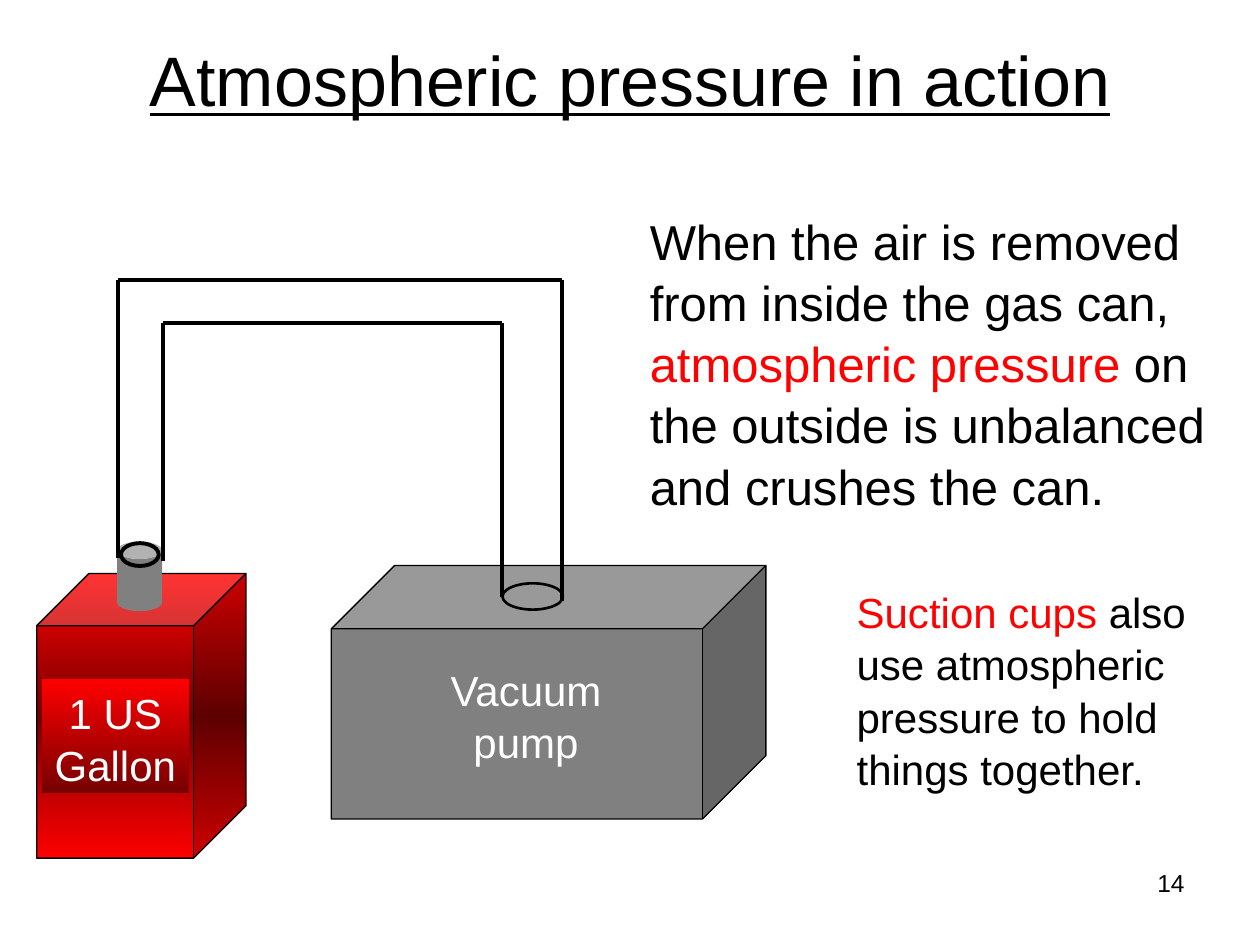
from copy import deepcopy

from lxml.etree import SubElement
from pptx import Presentation
from pptx.dml.color import RGBColor
from pptx.enum.shapes import MSO_CONNECTOR, MSO_SHAPE
from pptx.enum.text import MSO_ANCHOR, PP_ALIGN
from pptx.oxml.ns import qn
from pptx.util import Cm, Pt

BLACK, WHITE, RED, DARK_RED, GRAY = "000000", "FFFFFF", "FF0000", "760000", "808080"


def color(value):
    return RGBColor.from_string(value)


def write_text(shape, lines, size=24, font_color=BLACK, align=PP_ALIGN.LEFT,
               underline=None, anchor=MSO_ANCHOR.TOP, wrap=True, spacing=1.04):
    """Write one paragraph per line; a line is a list of text or (text, color)."""
    frame = shape.text_frame
    frame.word_wrap = wrap
    frame.vertical_anchor = anchor
    for index, line in enumerate(lines):
        paragraph = frame.paragraphs[0] if index == 0 else frame.add_paragraph()
        paragraph.alignment = align
        paragraph.line_spacing = spacing
        for part in line:
            text, part_color = part if isinstance(part, tuple) else (part, font_color)
            run = paragraph.add_run()
            run.text = text
            run.font.name = "Arial"
            run.font.size = Pt(size)
            run.font.underline = underline
            run.font.color.rgb = color(part_color)


def fill_gradient(shape, colors):
    """Fill from top to bottom with evenly spaced colors."""
    shape.fill.gradient()
    shape.fill.gradient_angle = 270
    stop_list = shape.element.spPr.find(qn("a:gradFill")).find(qn("a:gsLst"))
    while len(stop_list) < len(colors):
        stop_list.append(deepcopy(stop_list[0]))
    for index, stop in enumerate(shape.fill.gradient_stops):
        stop.position = index / (len(colors) - 1)
        stop.color.rgb = color(colors[index])


def add_shape(slide, kind, left, top, width, height, fill=None, line_width=None,
              adjustment=None):
    shape = slide.shapes.add_shape(kind, Cm(left), Cm(top), Cm(width), Cm(height))
    shape.shadow.inherit = False
    if isinstance(fill, list):
        fill_gradient(shape, fill)
    elif fill:
        shape.fill.solid()
        shape.fill.fore_color.rgb = color(fill)
    else:
        shape.fill.background()
    if line_width:
        shape.line.color.rgb = color(BLACK)
        shape.line.width = Pt(line_width)
    else:
        shape.line.fill.background()
    if adjustment:
        shape.adjustments[0] = adjustment
    return shape


def add_label(slide, left, top, width, height, fill, words):
    label = add_shape(slide, MSO_SHAPE.RECTANGLE, left, top, width, height, fill)
    write_text(label, [[word] for word in words], font_color=WHITE,
               align=PP_ALIGN.CENTER, wrap=False)


def add_text(slide, left, top, width, height, lines, **text_format):
    box = slide.shapes.add_textbox(Cm(left), Cm(top), Cm(width), Cm(height))
    write_text(box, lines, **text_format)
    return box


def add_title(slide, left, top, width, height, text):
    title = slide.shapes.title
    title.left, title.top = Cm(left), Cm(top)
    title.width, title.height = Cm(width), Cm(height)
    write_text(title, [[text]], size=40, align=PP_ALIGN.CENTER, underline=True,
               anchor=MSO_ANCHOR.MIDDLE, spacing=1.0)


def add_pump(slide, left, top, width, height):
    add_shape(slide, MSO_SHAPE.CUBE, left, top, width, height, GRAY, 0.75, 0.25)
    add_label(slide, left + 2.11, top + 1.83, 3.63, 2.29, GRAY, ["Vacuum", "pump"])
    # Port where the hose enters
    add_shape(slide, MSO_SHAPE.OVAL, left + 3.45, top + 0.36, 1.22, 0.53, line_width=1.5)


def add_gas_can(slide, left, top, width, height):
    add_shape(slide, MSO_SHAPE.CUBE, left, top, width, height,
              [RED, DARK_RED, RED], 0.75, 0.25)
    add_label(slide, left + 0.1, top + 2.13, 2.97, 2.29, [RED, DARK_RED],
              ["1 US", "Gallon"])
    # Spout and its opening
    add_shape(slide, MSO_SHAPE.CAN, left + 1.62, top - 0.64, 0.91, 1.4, GRAY,
              adjustment=0.384)
    add_shape(slide, MSO_SHAPE.OVAL, left + 1.7, top - 0.61, 0.76, 0.46, line_width=2.25)


def add_hose(slide, left, top, width, height):
    inner_left, inner_top, inner_right = 0.91, 0.88, width - 1.2
    segments = [
        # Outer wall
        (0, 0, width, 0),
        (0, 0, 0, 5.61),
        (width, 0, width, height),
        # Inner wall
        (inner_left, inner_top, inner_right, inner_top),
        (inner_left, inner_top, inner_left, 5.66),
        (inner_right, inner_top, inner_right, height - 0.08),
    ]
    for x1, y1, x2, y2 in segments:
        line = slide.shapes.add_connector(
            MSO_CONNECTOR.STRAIGHT, Cm(left + x1), Cm(top + y1),
            Cm(left + x2), Cm(top + y2))
        line.line.color.rgb = color(BLACK)
        line.line.width = Pt(2.25)
        SubElement(line.element.spPr, qn("a:effectLst"))


def main():
    presentation = Presentation()
    presentation.slide_width, presentation.slide_height = Cm(25.4), Cm(19.05)
    slide = presentation.slides.add_slide(presentation.slide_layouts[5])

    add_title(slide, 0, 0, 25.4, 3.18, "Atmospheric pressure in action")

    # Explanation
    add_text(slide, 12.85, 4.09, 11.73, 6.2, [
        ["When the air is removed"],
        ["from inside the gas can,"],
        [("atmospheric pressure ", RED), "on"],
        ["the outside is unbalanced"],
        ["and crushes the can."],
    ], size=28, wrap=False)

    # Experiment
    add_pump(slide, 6.68, 11.4, 8.76, 5.11)
    add_gas_can(slide, 0.74, 11.56, 4.22, 5.74)
    add_hose(slide, 2.37, 5.64, 8.95, 6.48)

    # Second example
    add_text(slide, 17.02, 11.66, 7.16, 4.37, [
        [("Suction cups ", RED), "also"],
        ["use atmospheric"],
        ["pressure to hold"],
        ["things together."],
    ])

    # Slide number
    add_text(slide, 18.21, 17.35, 5.92, 1.32, [["14"]], size=14, align=PP_ALIGN.RIGHT)

    presentation.save("out.pptx")


if __name__ == "__main__":
    main()
